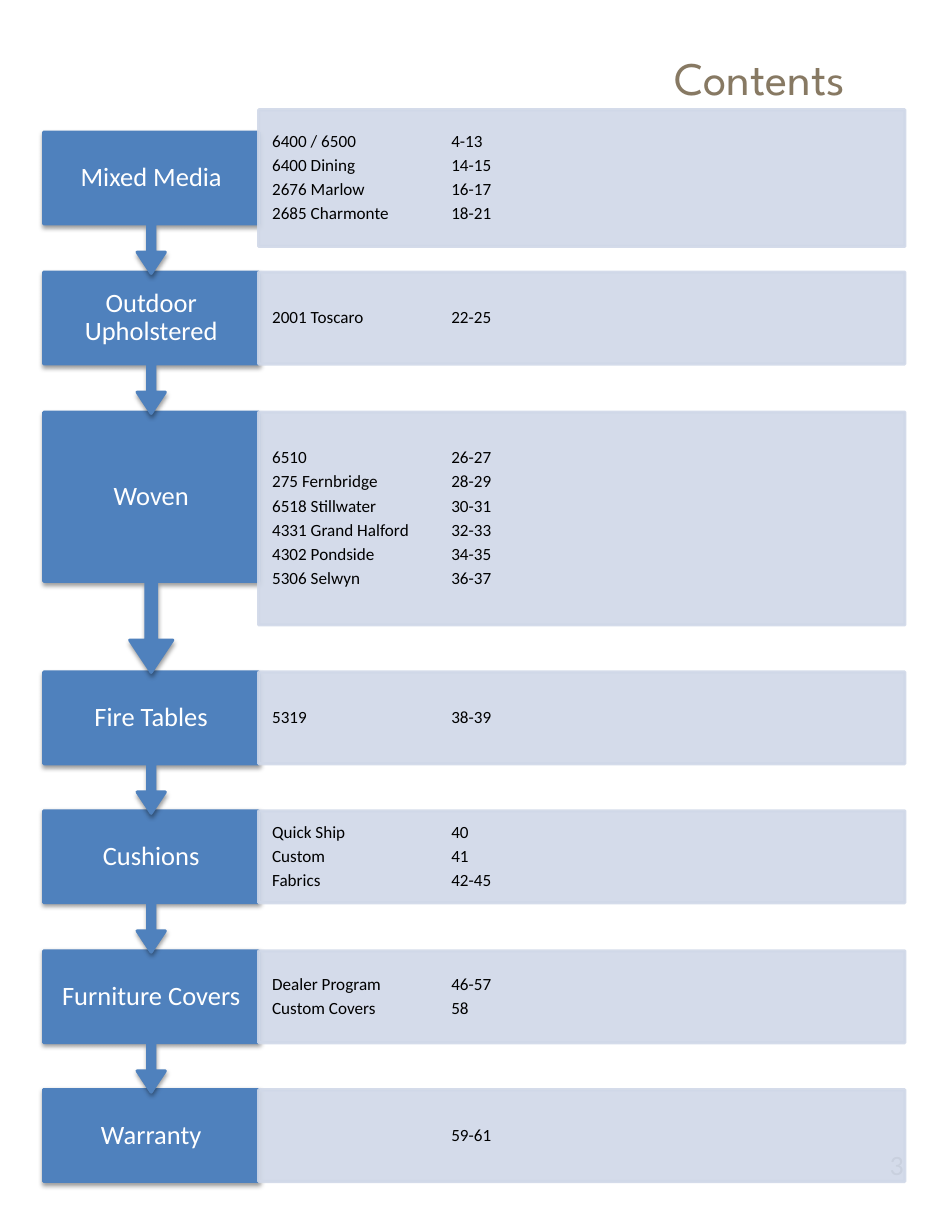
from lxml.etree import SubElement
from pptx import Presentation
from pptx.dml.color import RGBColor
from pptx.enum.shapes import MSO_SHAPE
from pptx.enum.text import MSO_ANCHOR, PP_ALIGN
from pptx.oxml.ns import qn
from pptx.util import Inches, Pt

COLORS = {"box": "4F81BD", "panel": "D0D8E8", "title": "877963",
          "light": "FFFFFF", "text": "000000", "number": "898989"}
LEFT, BOX_W, PANEL_W = 0.39, 1.92, 5.77
ROW_H, BOX_SHARE, TAB = 0.82, 0.65, 1.6

# heading, box top, box height, panel top, panel height, entries
SECTIONS = [
    ("Mixed Media", 1.18, ROW_H, 0.98, 1.22,
     [("6400 / 6500", "4-13"), ("6400 Dining", "14-15"),
      ("2676 Marlow", "16-17"), ("2685 Charmonte", "18-21")]),
    ("Outdoor Upholstered", 2.43, ROW_H, 2.43, ROW_H, [("2001 Toscaro", "22-25")]),
    ("Woven", 3.68, 1.51, 3.68, 1.9,
     [("6510", "26-27"), ("275 Fernbridge", "28-29"), ("6518 Stillwater", "30-31"),
      ("4331 Grand Halford", "32-33"), ("4302 Pondside", "34-35"),
      ("5306 Selwyn", "36-37")]),
    ("Fire Tables", 6, ROW_H, 6, ROW_H, [("5319", "38-39")]),
    ("Cushions", 7.24, ROW_H, 7.24, ROW_H,
     [("Quick Ship", "40"), ("Custom", "41"), ("Fabrics", "42-45")]),
    ("Furniture Covers", 8.49, ROW_H, 8.49, ROW_H,
     [("Dealer Program", "46-57"), ("Custom Covers", "58")]),
    ("Warranty", 9.73, ROW_H, 9.73, ROW_H, [("", "59-61")]),
]


def rgb(name):
    """Return the named colour."""
    return RGBColor.from_string(COLORS[name])


def style_font(p, size, color, name="Calibri"):
    """Set the font of a paragraph."""
    p.font.size, p.font.name = Pt(size), name
    p.font.color.rgb = rgb(color)


def set_frame(tf, x, y, anchor=MSO_ANCHOR.MIDDLE):
    """Set side and top insets, anchor and wrapping of a text frame."""
    tf.margin_left = tf.margin_right = Inches(x)
    tf.margin_top = tf.margin_bottom = Inches(y)
    tf.vertical_anchor, tf.word_wrap = anchor, True


def add_block(s, kind, box, color):
    """Add a filled and outlined shape without a shadow."""
    sp = s.shapes.add_shape(kind, *map(Inches, box))
    sp.shadow.inherit = False
    sp.fill.solid()
    sp.fill.fore_color.rgb = sp.line.color.rgb = rgb(color)
    sp.line.width = Pt(2)
    return sp


def add_shadow(sp):
    """Give a shape a soft shadow below it."""
    effects = sp._element.spPr.find(qn("a:effectLst"))
    shadow = SubElement(effects, qn("a:outerShdw"), blurRad=str(Pt(3.1)),
                        dist=str(Pt(1.6)), dir="5400000", rotWithShape="0")
    color = SubElement(shadow, qn("a:srgbClr"), val=COLORS["text"])
    SubElement(color, qn("a:alpha"), val="38000")


def add_heading(s, text, box, arrow):
    """Add a section box, with an arrow to the next section if asked."""
    x, y, w, h = box
    if arrow:
        sp = add_block(s, MSO_SHAPE.DOWN_ARROW_CALLOUT, (x, y, w, h / BOX_SHARE), "box")
        for i, value in enumerate((0.05, 0.1, 0.15, BOX_SHARE)):
            sp.adjustments[i] = value
    else:
        sp = add_block(s, MSO_SHAPE.RECTANGLE, box, "box")
    add_shadow(sp)
    set_frame(sp.text_frame, 0.14, 0.13)
    p = sp.text_frame.paragraphs[0]
    p.text, p.alignment, p.line_spacing = text, PP_ALIGN.CENTER, 0.9
    style_font(p, 17, "light")


def add_entries(s, entries, box):
    """Add a translucent panel of entries with tabbed page numbers."""
    sp = add_block(s, MSO_SHAPE.RECTANGLE, box, "panel")
    for color in sp._element.spPr.iter(qn("a:srgbClr")):
        SubElement(color, qn("a:alpha"), val="90000")
    tf = sp.text_frame
    set_frame(tf, 0.12, 0.15)
    for i, entry in enumerate(entries):
        p = tf.add_paragraph() if i else tf.paragraphs[0]
        p.text = "\t".join(entry)
        p.alignment, p.line_spacing, p.space_after = PP_ALIGN.LEFT, 0.9, Pt(3.6)
        tabs = SubElement(p._p.get_or_add_pPr(), qn("a:tabLst"))
        SubElement(tabs, qn("a:tab"), pos=str(Inches(TAB)), algn="l")
        style_font(p, 11, "text")


def add_title(s, text, box):
    """Place and format the title placeholder."""
    sp = s.shapes.title
    sp.left, sp.top, sp.width, sp.height = map(Inches, box)
    set_frame(sp.text_frame, 0, 0, MSO_ANCHOR.TOP)
    p = sp.text_frame.paragraphs[0]
    p.text, p.alignment = text, PP_ALIGN.RIGHT
    style_font(p, 30, "title", "League Spartan")


def add_number(s, text, box):
    """Add the page number."""
    tf = s.shapes.add_textbox(*map(Inches, box)).text_frame
    set_frame(tf, 0, 0)
    p = tf.paragraphs[0]
    p.text, p.alignment = text, PP_ALIGN.RIGHT
    style_font(p, 18, "number")


def main():
    """Build the contents page."""
    prs = Presentation()
    prs.slide_width, prs.slide_height = Inches(8.5), Inches(11)
    s = prs.slides.add_slide(prs.slide_layouts[5])
    add_title(s, "Contents", (4.48, 0.44, 3.07, 0.76))
    add_number(s, "3", (7.07, 10.2, 1, 0.4))
    for section in reversed(SECTIONS):
        heading, top, height, panel_top, panel_h, entries = section
        add_heading(s, heading, (LEFT, top, BOX_W, height), section is not SECTIONS[-1])
        add_entries(s, entries, (LEFT + BOX_W, panel_top, PANEL_W, panel_h))
    prs.save("out.pptx")


if __name__ == "__main__":
    main()
